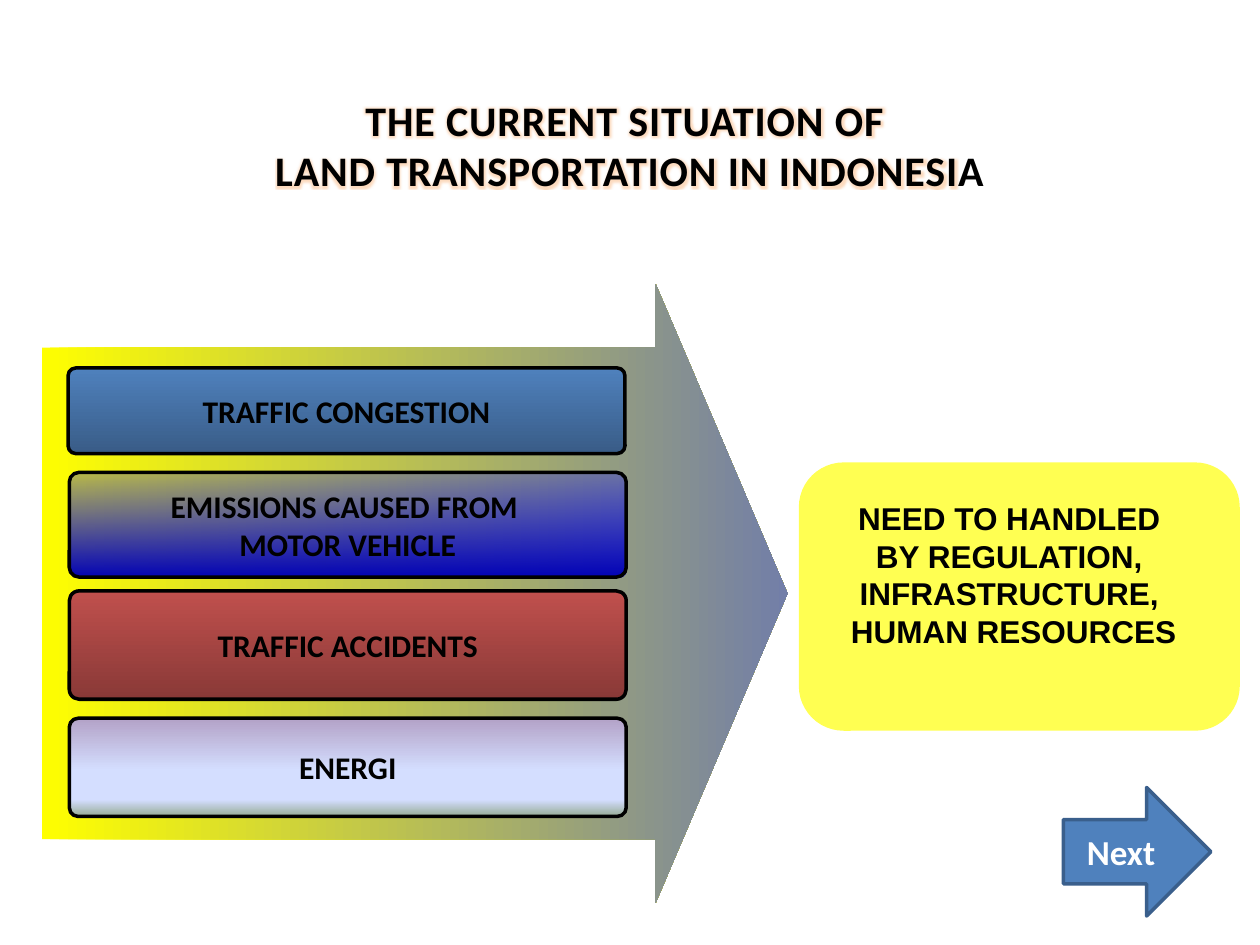
from lxml import etree
from pptx import Presentation
from pptx.dml.color import RGBColor
from pptx.enum import shapes, text
from pptx.oxml import ns
from pptx.util import Inches, Pt

COLORS = {
    "black": "000000", "white": "FFFFFF", "yellow": "FFFF00", "steel": "727EA8",
    "blue": "4F81BD", "edge": "3A5F8C", "navy": "395C87", "pure": "0000FF",
    "deep": "0000B6", "red": "C0504D", "maroon": "893937", "lilac": "B3A2C7",
    "pale": "D4DEFF", "sage": "96AB94", "rim": "E78738", "glow": "F79646",
}

TITLE = ["THE CURRENT SITUATION OF ", "LAND TRANSPORTATION IN INDONESIA"]
NEEDS = ["NEED TO HANDLED ", "BY REGULATION, ", "INFRASTRUCTURE, ", "HUMAN RESOURCES"]

# Issues: left, top, height, lines, gradient stops (position, colour, opacity)
ISSUES = [
    (0.54, 2.92, 0.68, ["TRAFFIC CONGESTION"],
     [(0, "blue", 100), (100, "navy", 100)]),
    (0.55, 3.75, 0.83, ["EMISSIONS CAUSED FROM ", "MOTOR VEHICLE"],
     [(0, "pure", 25), (100, "deep", 100)]),
    (0.55, 4.69, 0.86, ["TRAFFIC ACCIDENTS"],
     [(0, "red", 100), (100, "maroon", 100)]),
    (0.55, 5.7, 0.78, ["ENERGI"],
     [(0, "lilac", 100), (53, "pale", 100), (83, "pale", 100), (100, "sage", 100)]),
]
BAR_WIDTH = 4.42
KINDS = shapes.MSO_SHAPE


def rgb(name):
    return RGBColor.from_string(COLORS[name])


def node(xml):
    return etree.fromstring(xml.replace(">", f" {ns.nsdecls('a')}>", 1))


def tint(name, alpha):
    return f'<a:srgbClr val="{COLORS[name]}"><a:alpha val="{alpha * 1000}"/></a:srgbClr>'


def blend(shape, stops, angle):
    """Give the shape a linear gradient with any number of stops."""
    shape.fill.solid()
    old = shape._element.spPr.find(ns.qn("a:solidFill"))
    marks = "".join(f'<a:gs pos="{pos * 1000}">{tint(name, alpha)}</a:gs>'
                    for pos, name, alpha in stops)
    grad = node(f'<a:gradFill><a:gsLst>{marks}</a:gsLst>'
                f'<a:lin ang="{angle * 60000}" scaled="0"/></a:gradFill>')
    old.getparent().replace(old, grad)


def draw(slide, kind, box, adjust=(), line=None):
    shape = slide.shapes.add_shape(kind, *map(Inches, box))
    shape.shadow.inherit = False
    for i, value in enumerate(adjust):
        shape.adjustments[i] = value
    if line:
        shape.line.color.rgb = rgb(line)
        shape.line.width = Pt(2)
    else:
        shape.line.fill.background()
    return shape


def write(shape, lines, size, font="Calibri", color="black", wrap=True):
    frame = shape.text_frame
    frame.word_wrap = wrap
    frame.text = "\n".join(lines)
    for para in frame.paragraphs:
        para.alignment = text.PP_ALIGN.CENTER
        for run in para.runs:
            run.font.size, run.font.bold = Pt(size), True
            run.font.color.rgb = rgb(color)
            run.font.name = font


def label(slide, box, lines, size, font):
    shape = slide.shapes.add_textbox(*map(Inches, box))
    write(shape, lines, size, font)
    shape.text_frame.auto_size = text.MSO_AUTO_SIZE.SHAPE_TO_FIT_TEXT
    return shape


def main():
    deck = Presentation()
    deck.slide_width, deck.slide_height = Inches(10), Inches(7.5)
    slide = deck.slides.add_slide(deck.slide_layouts[6])

    # Large arrow behind the issues
    arrow = draw(slide, KINDS.RIGHT_ARROW, (0.33, 2.25, 5.92, 4.92), (0.793, 0.213))
    blend(arrow, [(0, "yellow", 100), (100, "steel", 100)], 0)

    # Title with outlined, glowing letters
    title = label(slide, (0, 0.7, 10, 0.91), TITLE, 24, "Calibri")
    for para in title.text_frame.paragraphs:
        for run in para.runs:
            props = run.font._element
            props.set("spc", "50")
            props.insert(0, node(f'<a:ln w="12700"><a:solidFill>{tint("rim", 100)}'
                                 '</a:solidFill></a:ln>'))
            props.insert(2, node('<a:effectLst><a:glow rad="45500">'
                                 f'{tint("glow", 35)}</a:glow></a:effectLst>'))

    # Response panel
    panel = draw(slide, KINDS.ROUNDED_RECTANGLE, (6.34, 3.67, 3.5, 2.13), (0.167,))
    panel.fill.solid()
    panel.fill.fore_color.rgb = rgb("yellow")
    tone = panel._element.spPr.find(".//" + ns.qn("a:srgbClr"))
    etree.SubElement(tone, ns.qn("a:alpha")).set("val", "68000")
    label(slide, (6.41, 3.91, 3.27, 1.6), NEEDS, 18, "Arial")

    # Issue bars
    for left, top, height, lines, stops in ISSUES:
        bar = draw(slide, KINDS.ROUNDED_RECTANGLE, (left, top, BAR_WIDTH, height),
                   (0.091,), "black")
        blend(bar, stops, 90)
        write(bar, lines, 18, wrap=False)

    # Next button
    button = draw(slide, KINDS.RIGHT_ARROW, (8.44, 6.25, 1.17, 1.02), line="edge")
    button.fill.solid()
    button.fill.fore_color.rgb = rgb("blue")
    write(button, ["Next"], 20, color="white")

    deck.save("out.pptx")


if __name__ == "__main__":
    main()
